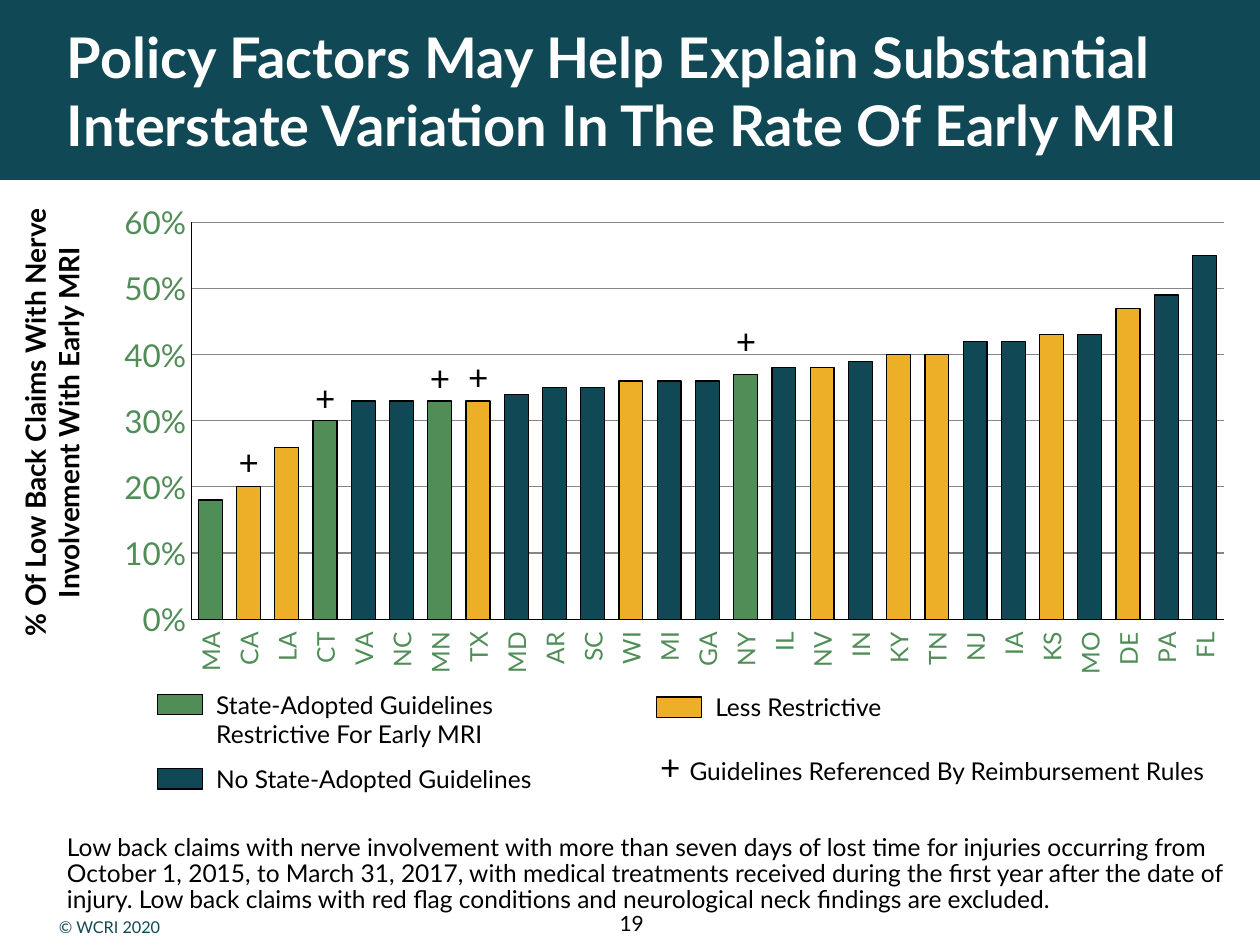
from lxml.etree import SubElement as Sub
from pptx import Presentation
from pptx.chart.data import CategoryChartData as Data
from pptx.dml.color import RGBColor as RGB
from pptx.enum.chart import XL_CHART_TYPE as Kind, XL_TICK_LABEL_POSITION as Pos, XL_TICK_MARK as Tick
from pptx.enum.shapes import MSO_SHAPE as Form
from pptx.enum.text import MSO_ANCHOR as Anchor, MSO_AUTO_SIZE as Fit, PP_ALIGN as Align
from pptx.oxml.ns import qn
from pptx.util import Cm, Pt

FONT = "Lato"
HUES = {"teal": "114855", "green": "508D57", "gold": "EEAF28",
        "black": "000000", "white": "FFFFFF", "grey": "868686"}

TITLE = "Policy Factors May Help Explain Substantial Interstate Variation In The Rate Of Early MRI"
NOTE = ("Low back claims with nerve involvement with more than seven days of lost time for "
        "injuries occurring from October 1, 2015, to March 31, 2017, with medical treatments "
        "received during the first year after the date of injury. Low back claims with red flag "
        "conditions and neurological neck findings are excluded.")
AXIS = "% Of Low Back Claims With Nerve Involvement With Early MRI"

RATES = {"MA": 0.18, "CA": 0.2, "LA": 0.26, "CT": 0.3, "VA": 0.33, "NC": 0.33, "MN": 0.33,
         "TX": 0.33, "MD": 0.34, "AR": 0.35, "SC": 0.35, "WI": 0.36, "MI": 0.36, "GA": 0.36,
         "NY": 0.37, "IL": 0.38, "NV": 0.38, "IN": 0.39, "KY": 0.4, "TN": 0.4, "NJ": 0.42,
         "IA": 0.42, "KS": 0.43, "MO": 0.43, "DE": 0.47, "PA": 0.49, "FL": 0.55}
GROUPS = {"green": ["MA", "CT", "MN", "NY"],
          "gold": ["CA", "LA", "TX", "WI", "NV", "KY", "TN", "KS", "DE"]}
MARKS = {"CA": 8.76, "CT": 7.47, "MN": 7.06, "TX": 7.04, "NY": 6.32}
KEYS = [("green", "State-Adopted Guidelines Restrictive For Early MRI", 3.18, 14, 8.26, 1.45),
        ("gold", "Less Restrictive", 13.24, 14.05, 5.16, 0.86),
        ("teal", "No State-Adopted Guidelines", 3.18, 15.5, 10.67, 0.86)]

CHART = (0.43, 4.09, 24.46, 9.55)
PLOT = {"x": 0.14, "y": 0.041, "w": 0.851, "h": 0.838}


def tint(name):
    return RGB.from_string(HUES[name])


def style(font, size, hue="black", bold=False):
    font.name, font.size, font.bold = FONT, Pt(size), bold
    font.color.rgb = tint(hue)


def place(shape, box):
    shape.left, shape.top, shape.width, shape.height = map(Cm, box)


def write(shape, runs, hue="black", bold=False, align=Align.LEFT, anchor=Anchor.TOP):
    frame = shape.text_frame
    frame.word_wrap, frame.auto_size = True, Fit.NONE
    frame.vertical_anchor = anchor
    para = frame.paragraphs[0]
    para.alignment = align
    for text, size in runs:
        run = para.add_run()
        run.text = text
        style(run.font, size, hue, bold)
    return para


def label(box, runs, **look):
    shape = slide.shapes.add_textbox(*map(Cm, box))
    return shape, write(shape, runs, **look)


def trim(frame):
    frame.margin_left = frame.margin_right = frame.margin_top = frame.margin_bottom = 0


def edge(line, hue="black"):
    line.color.rgb = tint(hue)
    line.width = Pt(0.75)


def block(box, hue):
    shape = slide.shapes.add_shape(Form.RECTANGLE, *map(Cm, box))
    shape.shadow.inherit = False
    shape.fill.solid()
    shape.fill.fore_color.rgb = tint(hue)
    return shape


def graph():
    data = Data(number_format="0%")
    data.categories = list(RATES)
    data.add_series("Series 1", list(RATES.values()))
    chart = slide.shapes.add_chart(Kind.COLUMN_CLUSTERED, *map(Cm, CHART), data).chart
    chart.has_legend = chart.has_title = False
    style(chart.font, 18)

    area = chart.plots[0]
    area.gap_width, area.vary_by_categories = 60, False
    bars = area.series[0]
    bars.format.fill.solid()
    bars.format.fill.fore_color.rgb = tint("teal")
    edge(bars.format.line)
    states = list(RATES)
    for hue, names in GROUPS.items():
        for name in names:
            look = bars.points[states.index(name)].format
            look.fill.solid()
            look.fill.fore_color.rgb = tint(hue)
            edge(look.line)

    cat, val = chart.category_axis, chart.value_axis
    for axis, size in ((cat, 14), (val, 18)):
        axis.major_tick_mark = axis.minor_tick_mark = Tick.NONE
        style(axis.tick_labels.font, size, "green")
        edge(axis.format.line)
    cat.tick_label_position = Pos.LOW
    cat.has_major_gridlines = False
    turn = cat._element.find(qn("c:txPr")).find(qn("a:bodyPr"))
    turn.set("rot", "-5400000")
    turn.set("vert", "horz")
    val.minimum_scale, val.maximum_scale, val.major_unit = 0, 0.6, 0.1
    val.tick_labels.number_format = "0%"
    val.tick_labels.number_format_is_linked = False
    val.has_major_gridlines = True
    edge(val.major_gridlines.format.line, "grey")

    root = chart._chartSpace.chart.plotArea
    for old in root.findall(qn("c:layout")):
        root.remove(old)
    frame = Sub(root, qn("c:layout"))
    root.insert(0, frame)
    spot = Sub(frame, qn("c:manualLayout"))
    rules = [("layoutTarget", "inner"), ("xMode", "edge"), ("yMode", "edge"), *PLOT.items()]
    for tag, value in rules:
        Sub(spot, qn("c:" + tag)).set("val", str(value))


deck = Presentation()
deck.slide_width, deck.slide_height = Cm(25.4), Cm(19.05)
slide = deck.slides.add_slide(deck.slide_layouts[1])

band = block((0, 0, 25.4, 3.63), "teal")
band.line.fill.background()
slide.shapes._spTree.insert(2, band._element)

head, body = slide.placeholders
place(head, (1.35, 0, 23.29, 3.63))
trim(head.text_frame)
write(head, [(TITLE, 32)], hue="white", bold=True, anchor=Anchor.MIDDLE)

graph()

place(body, (1.35, 16.54, 23.55, 2.16))
trim(body.text_frame)
para = write(body, [(NOTE, 14)], anchor=Anchor.MIDDLE)
props = para._p.get_or_add_pPr()
props.set("marL", "0")
props.set("indent", "0")
Sub(props, qn("a:buNone"))
para.line_spacing, para.space_before, para.space_after = Pt(15), Pt(0), Pt(4)

side, _ = label((-3.89, 7.7, 9.88, 1.63), [(AXIS, 16)], bold=True, align=Align.CENTER)
side.rotation = 270

for hue, text, left, top, wide, high in KEYS:
    edge(block((left, top, 0.91, 0.41), hue).line)
    label((left + 0.93, top - 0.22, wide, high), [(text, 14)])
label((13.06, 14.91, 12.17, 1.24),
      [("+ ", 20), ("Guidelines Referenced By Reimbursement Rules", 14)])

start = CHART[0] + PLOT["x"] * CHART[2]
step = PLOT["w"] * CHART[2] / len(RATES)
for rank, state in enumerate(RATES):
    if state in MARKS:
        mid = start + (rank + 0.5) * step
        label((mid - 0.45, MARKS[state], 0.9, 1.12), [("+", 20)])

label((12.19, 18.24, 1.09, 0.84), [("19", 12)], align=Align.CENTER)
_, para = label((0.94, 18.26, 10.16, 1), [("© WCRI 2020", 16)], hue="teal", anchor=Anchor.MIDDLE)
para.runs[0].font._element.set("baseline", "30000")

deck.save("out.pptx")
